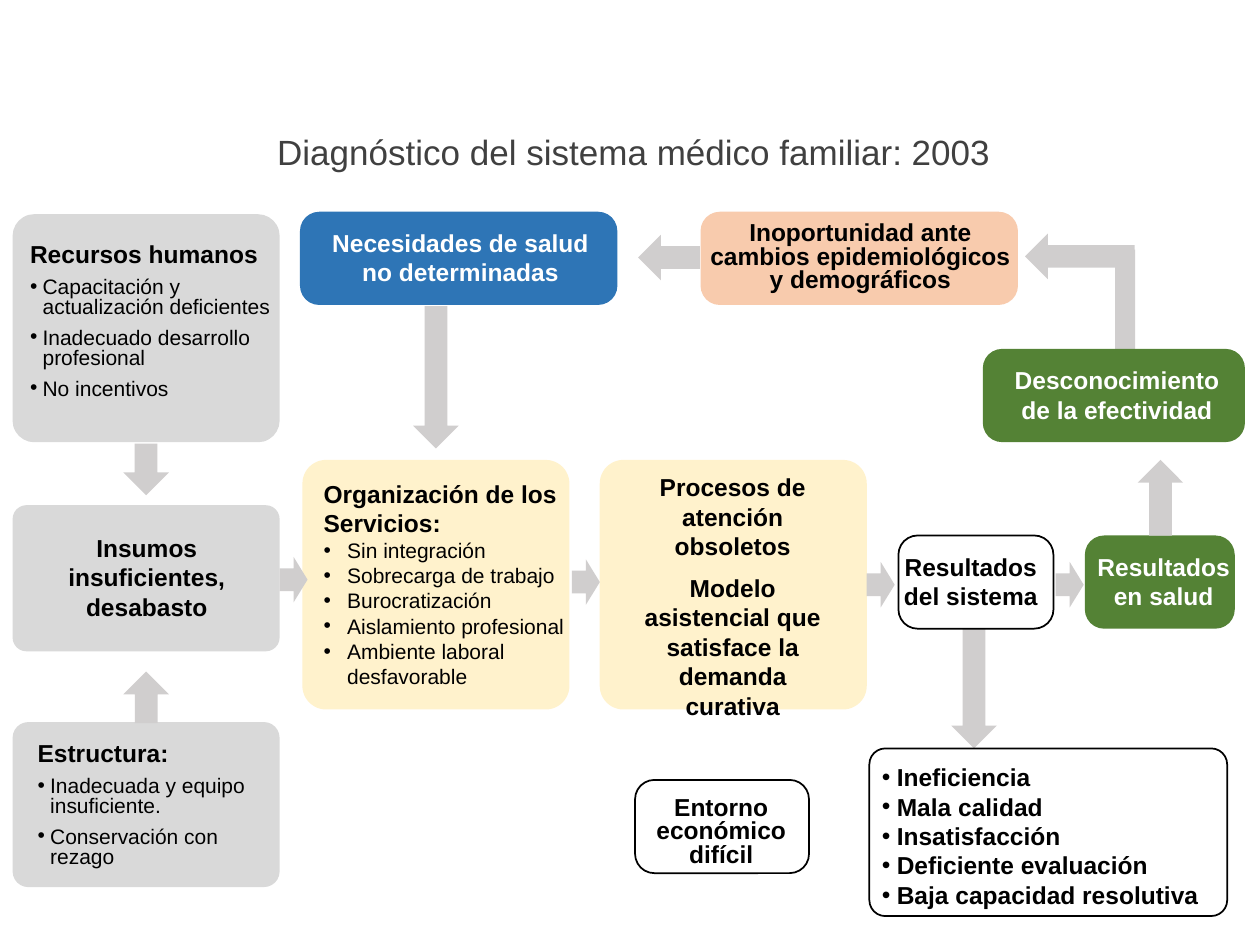
from lxml import etree
from pptx import Presentation
from pptx.dml.color import RGBColor
from pptx.enum.shapes import MSO_SHAPE
from pptx.enum.text import MSO_ANCHOR, PP_ALIGN
from pptx.oxml.ns import qn
from pptx.util import Pt

ROUND, RECT, ARROW = MSO_SHAPE.ROUNDED_RECTANGLE, MSO_SHAPE.RECTANGLE, MSO_SHAPE.DOWN_ARROW
LEFT, CENTER = PP_ALIGN.LEFT, PP_ALIGN.CENTER
TOP, MIDDLE = MSO_ANCHOR.TOP, MSO_ANCHOR.MIDDLE

BLACK = RGBColor(0x00, 0x00, 0x00)
WHITE = RGBColor(0xFF, 0xFF, 0xFF)
DARK = RGBColor(0x40, 0x40, 0x40)
GRAY = RGBColor(0xD9, 0xD9, 0xD9)
STEEL = RGBColor(0xD0, 0xCE, 0xCE)
CREAM = RGBColor(0xFF, 0xF2, 0xCC)
BLUE = RGBColor(0x2E, 0x75, 0xB6)
PEACH = RGBColor(0xF8, 0xCB, 0xAD)
GREEN = RGBColor(0x54, 0x82, 0x35)

FONT = "Arial"
LARGE, SMALL = 0.095, 0.207  # corner rounding of tall and low boxes
DOWN, GO_LEFT, UP, RIGHT = 0, 90, 180, 270  # turns of a down arrow
THICK = 26

TITLE = "Diagnóstico del sistema médico familiar: 2003"

# Box, fill, rounding; text area, heading lines, bullet lines, format
BOXES = [
    ((7.2, 122.4, 152.6, 130.3), GRAY, LARGE, (10.1, 136.1, 155.5, 100.8),
     ["Recursos humanos"],
     ["Capacitación y actualización deficientes",
      "Inadecuado desarrollo profesional", "No incentivos"],
     dict(align=LEFT, spacing=0.8, gap=6)),
    ((7.2, 288.7, 152.6, 83.5), GRAY, LARGE, (25.2, 301, 117.4, 58.3),
     ["Insumos insuficientes, desabasto"], [], {}),
    ((7.2, 412.6, 152.6, 94.3), GRAY, LARGE, (14.4, 421.2, 145.4, 82.1),
     ["Estructura:"],
     ["Inadecuada y equipo insuficiente.", "Conservación con rezago"],
     dict(align=LEFT, spacing=0.8, gap=6)),
    ((172.8, 262.8, 152.6, 142.6), CREAM, LARGE, (177.8, 270, 157.7, 128.2),
     ["Organización de los Servicios:"],
     ["Sin integración", "Sobrecarga de trabajo", "Burocratización",
      "Aislamiento profesional", "Ambiente laboral desfavorable"],
     dict(align=LEFT, indent=13.5)),
    ((342.7, 262.8, 152.6, 142.6), CREAM, LARGE, (352.1, 266.4, 133.2, 134.6),
     ["Procesos de atención obsoletos",
      "Modelo asistencial que satisface la demanda curativa"], [],
     dict(gap=7, side=11)),
    ((513.4, 306, 88.6, 53.3), WHITE, SMALL, (507.6, 311.8, 94.3, 41),
     ["Resultados del sistema"], [], {}),
    ((171.4, 121, 181.4, 53.3), BLUE, SMALL, (173.5, 126.7, 179.3, 41),
     ["Necesidades de salud", "no determinadas"], [], dict(color=WHITE)),
    ((400.3, 121, 181.4, 53.3), PEACH, SMALL, (397.4, 123.8, 188.6, 48.2),
     ["Inoportunidad ante cambios epidemiológicos y demográficos"], [],
     dict(spacing=0.8)),
    ((561.6, 199.4, 149.8, 53.3), GREEN, SMALL, (564.5, 205.2, 147.6, 41),
     ["Desconocimiento de la efectividad"], [], dict(color=WHITE)),
    ((619.9, 306, 85.7, 53.3), GREEN, SMALL, (617.8, 311.8, 94.3, 41),
     ["Resultados en salud"], [], dict(color=WHITE)),
    ((496.8, 427.7, 204.5, 95.8), WHITE, LARGE, (496.8, 432, 204.5, 92.2),
     [],
     ["Ineficiencia", "Mala calidad", "Insatisfacción",
      "Deficiente evaluación", "Baja capacidad resolutiva"],
     dict(align=LEFT, indent=8.6, small=14, strong=True)),
    ((362.9, 445.7, 99.4, 53.3), WHITE, SMALL, (365, 452.2, 94.3, 48.2),
     ["Entorno económico difícil"], [], dict(spacing=0.8)),
]

# Centre x, centre y, length, turn
OUTCOME = (556.6, 393.5, 68.4, DOWN)
ARROWS = [
    (83.5, 268.2, 29.5, DOWN), (83.5, 398.5, 29.5, UP),
    (167.8, 331.2, 16, RIGHT), (334.8, 332.6, 16, RIGHT),
    (503.3, 334.1, 16, RIGHT), (611.3, 334.1, 16, RIGHT),
    (249.1, 215.6, 81.4, DOWN), (382.3, 147.2, 35.3, GO_LEFT),
    (663.1, 284.4, 43.2, UP), (617, 146.5, 62.6, GO_LEFT),
]
ELBOW = (637.2, 142.6, 11.5, 56.9)


def points(area):
    return [Pt(n) for n in area]


def add_block(slide, kind, area, fill):
    shape = slide.shapes.add_shape(kind, *points(area))
    shape.shadow.inherit = False
    shape.fill.solid()
    shape.fill.fore_color.rgb = fill
    shape.line.fill.background()
    return shape


def add_arrow(slide, x, y, length, turn):
    area = (x - THICK / 2, y - length / 2, THICK, length)
    add_block(slide, ARROW, area, STEEL).rotation = turn


def add_bullet(para, indent):
    props = para._p.get_or_add_pPr()
    props.set("marL", str(Pt(indent)))
    props.set("indent", str(-Pt(indent)))
    etree.SubElement(props, qn("a:buFont")).set("typeface", FONT)
    etree.SubElement(props, qn("a:buChar")).set("char", "•")


def write(frame, heads, items=(), align=CENTER, size=14, small=12, bold=True,
          strong=False, color=BLACK, spacing=1.0, gap=0, indent=7.2,
          side=7.2, anchor=TOP):
    """Fill a text frame with heading lines, then bulleted items."""
    frame.word_wrap = True
    frame.vertical_anchor = anchor
    frame.margin_left = frame.margin_right = Pt(side)
    frame.margin_top = frame.margin_bottom = Pt(3.6)
    lines = [(text, False) for text in heads] + [(text, True) for text in items]
    for i, (text, listed) in enumerate(lines):
        para = frame.paragraphs[0] if i == 0 else frame.add_paragraph()
        para.text = text
        para.alignment = align
        para.line_spacing = spacing
        para.space_before = Pt(gap if i else 0)
        if listed:
            add_bullet(para, indent)
        font = para.runs[0].font
        font.name = FONT
        font.size = Pt(small if listed else size)
        font.bold = strong if listed else bold
        font.color.rgb = color


def main():
    deck = Presentation()
    deck.slide_width, deck.slide_height = Pt(720), Pt(540)
    slide = deck.slides.add_slide(deck.slide_layouts[5])

    title = slide.shapes.title
    title.left, title.top, title.width, title.height = points((117.4, 70.5, 489.6, 31.7))
    write(title.text_frame, [TITLE], size=20, bold=False, color=DARK, anchor=MIDDLE)

    add_arrow(slide, *OUTCOME)
    add_block(slide, RECT, ELBOW, STEEL)
    for area, fill, corner, place, heads, items, style in BOXES:
        box = add_block(slide, ROUND, area, fill)
        box.adjustments[0] = corner
        if fill == WHITE:
            box.line.color.rgb = BLACK
            box.line.width = Pt(1)
        label = slide.shapes.add_textbox(*points(place))
        write(label.text_frame, heads, items, **style)
    for arrow in ARROWS:
        add_arrow(slide, *arrow)

    deck.save("out.pptx")


if __name__ == "__main__":
    main()
